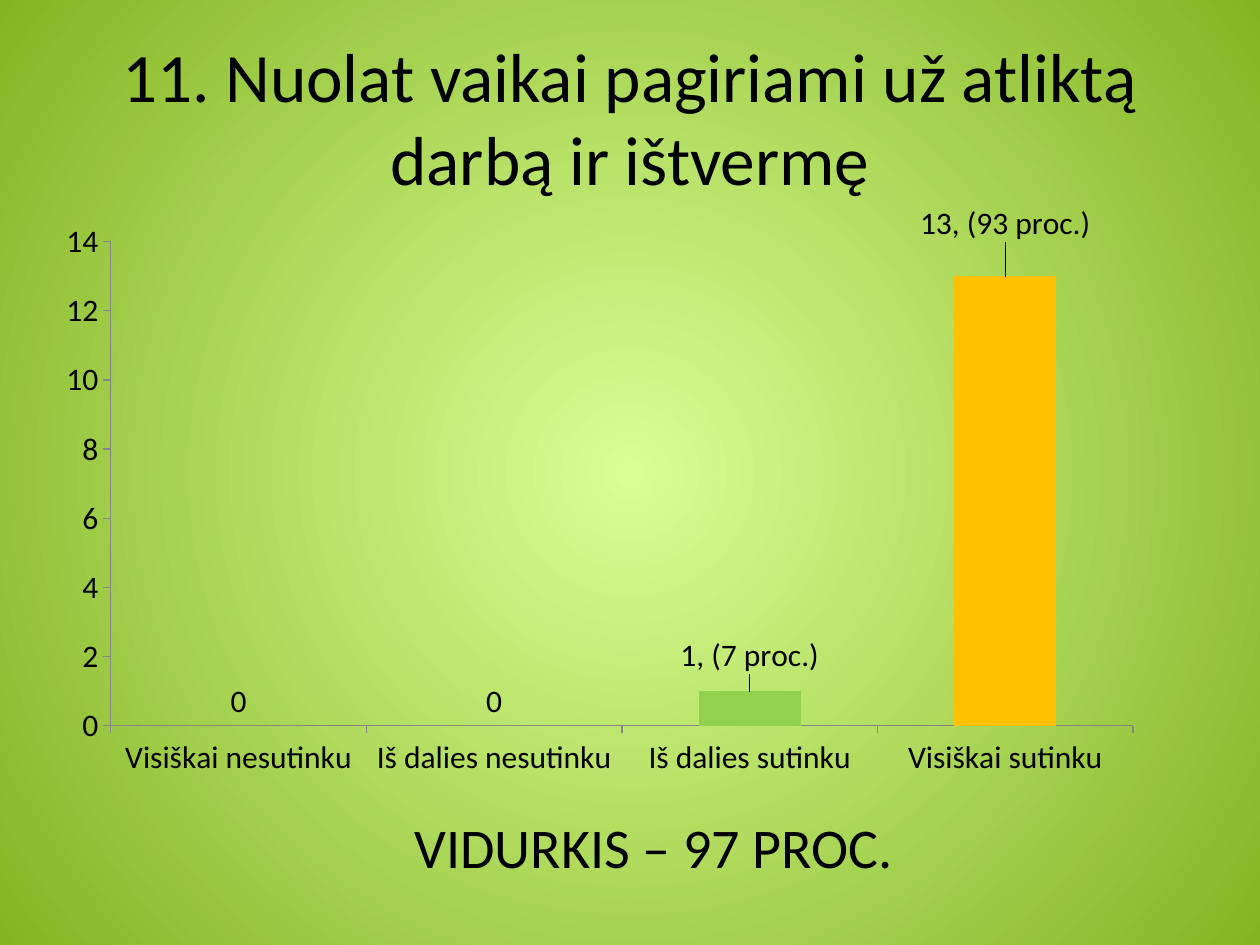
from lxml import etree
from pptx import Presentation
from pptx.chart.data import CategoryChartData
from pptx.dml.color import RGBColor
from pptx.enum import chart as charts, text
from pptx.oxml import ns
from pptx.util import Inches, Pt

COLORS = {
    "text": "000000", "axis": "868686", "center": "D9FF95", "edge": "84B423",
    "bar": "94C600", "partly": "92D050", "fully": "FFC000",
}
FONT = "Calibri"


def style_font(font, size):
    font.name = FONT
    font.size = Pt(size)
    font.color.rgb = RGBColor.from_string(COLORS["text"])


def manual_layout(**values):
    """Return a c:layout element with the given settings, in schema order."""
    layout = etree.Element(ns.qn("c:layout"))
    manual = etree.SubElement(layout, ns.qn("c:manualLayout"))
    for name, value in values.items():
        etree.SubElement(manual, ns.qn(f"c:{name}"), val=str(value))
    return layout


deck = Presentation()
deck.slide_width, deck.slide_height = Inches(10), Inches(7.5)
page = deck.slides.add_slide(deck.slide_layouts[5])

# Radial background
fill = page.background.fill
fill.gradient()
for stop, name, position in zip(fill.gradient_stops, ("center", "edge"), (0, 1)):
    stop.color.rgb = RGBColor.from_string(COLORS[name])
    stop.position = position
gradient = page.element.xpath(".//p:bg//a:gradFill")[0]
linear = gradient.find(ns.qn("a:lin"))
circle = etree.Element(ns.qn("a:path"), path="circle")
etree.SubElement(circle, ns.qn("a:fillToRect"), l="50000", t="50000", r="50000", b="50000")
gradient.replace(linear, circle)

# Title and average
title = page.shapes.title
title.left, title.top = Inches(0.5), Inches(0.3)
title.width, title.height = Inches(9), Inches(1.25)
average = page.shapes.add_textbox(Inches(0.9), Inches(6.4), Inches(8.58), Inches(0.64))
for box, words, size, anchor in (
    (title, "11. Nuolat vaikai pagiriami už atliktą darbą ir ištvermę", 39.6, text.MSO_ANCHOR.MIDDLE),
    (average, "VIDURKIS – 97 PROC.", 32, text.MSO_ANCHOR.TOP),
):
    frame = box.text_frame
    frame.word_wrap = True
    frame.auto_size = text.MSO_AUTO_SIZE.NONE
    frame.vertical_anchor = anchor
    para = frame.paragraphs[0]
    para.alignment = text.PP_ALIGN.CENTER
    span = para.add_run()
    span.text = words
    style_font(span.font, size)
average.text_frame.auto_size = text.MSO_AUTO_SIZE.SHAPE_TO_FIT_TEXT

# Answers chart
answers = CategoryChartData()
answers.categories = [
    "Visiškai nesutinku", "Iš dalies nesutinku", "Iš dalies sutinku", "Visiškai sutinku",
]
answers.add_series("Series 1", (0, 0, 1, 13))
chart = page.shapes.add_chart(
    charts.XL_CHART_TYPE.COLUMN_CLUSTERED,
    Inches(0.35), Inches(1.62), Inches(8.82), Inches(4.65), answers,
).chart
chart.has_legend = False
chart.has_title = False
style_font(chart.font, 18)

for axis in (chart.category_axis, chart.value_axis):
    axis.has_major_gridlines = False
    axis.major_tick_mark = charts.XL_TICK_MARK.OUTSIDE
    axis.minor_tick_mark = charts.XL_TICK_MARK.NONE
    axis.format.line.color.rgb = RGBColor.from_string(COLORS["axis"])
    axis.format.line.width = Pt(0.75)
chart.value_axis.minimum_scale = 0
chart.value_axis.maximum_scale = 14
chart.value_axis.major_unit = 2

plot = chart.plots[0]
plot.gap_width = 150
plot.vary_by_categories = False
series = plot.series[0]
series.invert_if_negative = False
series.format.fill.solid()
series.format.fill.fore_color.rgb = RGBColor.from_string(COLORS["bar"])
series.data_labels.show_value = True
series.data_labels.position = charts.XL_LABEL_POSITION.OUTSIDE_END

for index, name, words, shift in (
    (2, "partly", "1, (7 proc.)", -0.02),
    (3, "fully", "13, (93 proc.)", -0.05),
):
    point = series.points[index]
    point.format.fill.solid()
    point.format.fill.fore_color.rgb = RGBColor.from_string(COLORS[name])
    span = point.data_label.text_frame.paragraphs[0].add_run()
    span.text = words
    style_font(span.font, 18)
    point.data_label.position = charts.XL_LABEL_POSITION.OUTSIDE_END
    label_index = chart.element.xpath(f".//c:dLbl/c:idx[@val='{index}']")[0]
    label_index.addnext(manual_layout(x=0, y=shift))

area = chart.element.xpath(".//c:plotArea")[0]
for old in area.findall(ns.qn("c:layout")):
    area.remove(old)
area.insert(0, manual_layout(
    layoutTarget="inner", xMode="edge", yMode="edge", x=0.06, y=0.06, w=0.92, h=0.83,
))

deck.save("out.pptx")
